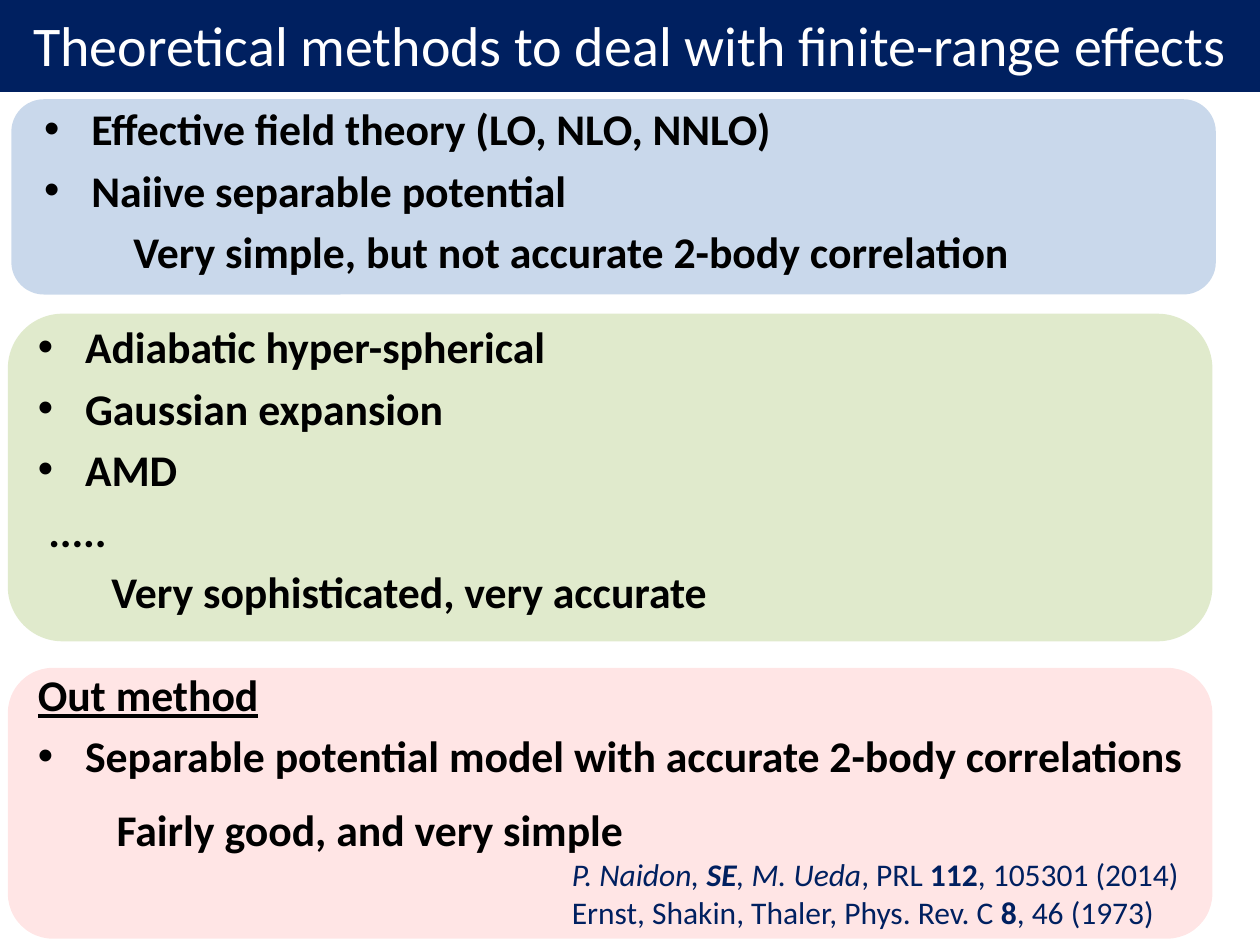
from lxml import etree
from pptx import Presentation
from pptx.dml.color import RGBColor
from pptx.enum import shapes, text
from pptx.oxml import ns
from pptx.util import Pt

NAVY = RGBColor(0x00, 0x20, 0x60)
WHITE = RGBColor(0xFF, 0xFF, 0xFF)
BLACK = RGBColor(0x00, 0x00, 0x00)
BLUE = RGBColor(0x4F, 0x81, 0xBD)
GREEN = RGBColor(0x9B, 0xBB, 0x59)
RED = RGBColor(0xFF, 0x00, 0x00)
BULLET_INDENT = 27


def place(shape, left, top, width, height, anchor):
    shape.left, shape.top = Pt(left), Pt(top)
    shape.width, shape.height = Pt(width), Pt(height)
    frame = shape.text_frame
    frame.word_wrap = True
    frame.auto_size = text.MSO_AUTO_SIZE.NONE
    frame.vertical_anchor = anchor
    return frame


def add_run(paragraph, words, size, color, bold=False, italic=False, underline=False):
    run = paragraph.add_run()
    run.text = words
    font = run.font
    font.name, font.size, font.color.rgb = "Calibri", Pt(size), color
    font.bold, font.italic, font.underline = bold, italic, underline


presentation = Presentation()
presentation.slide_width, presentation.slide_height = Pt(720), Pt(540)
slide = presentation.slides.add_slide(presentation.slide_layouts[4])
title, *bodies = slide.placeholders

# Tinted panels, behind the text
panels = [
    (6.5, 56.7, 111.6, BLUE, 30),
    (4.5, 179.3, 187.2, GREEN, 30),
    (4.5, 381.6, 154.8, RED, 10),
]
for position, (left, top, height, color, opacity) in enumerate(panels):
    panel = slide.shapes.add_shape(
        shapes.MSO_SHAPE.ROUNDED_RECTANGLE, Pt(left), Pt(top), Pt(688.3), Pt(height))
    panel.shadow.inherit = False
    panel.fill.solid()
    panel.fill.fore_color.rgb = color
    panel.line.fill.background()
    tint = panel.fill._xPr.find(".//" + ns.qn("a:srgbClr"))
    etree.SubElement(tint, ns.qn("a:alpha"), val=str(opacity * 1000))
    slide.shapes._spTree.insert(2 + position, panel._element)

# Title bar
title.fill.solid()
title.fill.fore_color.rgb = NAVY
frame = place(title, 0, -2.2, 720, 54.7, text.MSO_ANCHOR.MIDDLE)
paragraph = frame.paragraphs[0]
paragraph.alignment = text.PP_ALIGN.CENTER
add_run(paragraph, "Theoretical methods to deal with finite-range effects", 32, WHITE)

# Method lists: wording, bullet, left indent, space before, underline
lists = [
    ((18, 54.7, 608.4, 130.3), [
        ("Effective field theory (LO, NLO, NNLO)", True, BULLET_INDENT, 5, False),
        ("Naiive separable potential", True, BULLET_INDENT, 5, False),
        ("Very simple, but not accurate 2-body correlation", False, 51, 5, False),
    ]),
    ((14.4, 179.3, 719.3, 209.5), [
        ("Adiabatic hyper-spherical", True, BULLET_INDENT, 5, False),
        ("Gaussian expansion", True, BULLET_INDENT, 5, False),
        ("AMD", True, BULLET_INDENT, 5, False),
        (".....", False, 6, 5, False),
        ("Very sophisticated, very accurate", False, 42, 5, False),
    ]),
    ((14.4, 378, 674.6, 158.4), [
        ("Out method", False, 0, 5, True),
        ("Separable potential model with accurate 2-body correlations",
         True, BULLET_INDENT, 5, False),
        ("Fairly good, and very simple", False, 45, 12, False),
    ]),
]
for body, (box, lines) in zip(bodies, lists):
    frame = place(body, *box, text.MSO_ANCHOR.TOP)
    for number, (words, bulleted, indent, gap, underline) in enumerate(lines):
        paragraph = frame.add_paragraph() if number else frame.paragraphs[0]
        paragraph.alignment = text.PP_ALIGN.LEFT
        paragraph.space_before = Pt(gap)
        properties = paragraph._p.get_or_add_pPr()
        properties.set("marL", str(Pt(indent)))
        properties.set("indent", str(Pt(-BULLET_INDENT if bulleted else 0)))
        if bulleted:
            etree.SubElement(properties, ns.qn("a:buFont"), typeface="Arial")
            etree.SubElement(properties, ns.qn("a:buChar"), char="•")
        else:
            etree.SubElement(properties, ns.qn("a:buNone"))
        add_run(paragraph, words, 25, BLACK, bold=True, underline=underline)

# The layout's fourth body is not needed
unused = bodies[3]._element
unused.getparent().remove(unused)

# References: wording, bold, italic
references = [
    [("P. Naidon, ", False, True), ("SE", True, True), (", M. Ueda", False, True),
     (", PRL ", False, False), ("112", True, False), (", 105301 (2014)", False, False)],
    [("Ernst, Shakin, Thaler, Phys. Rev. C ", False, False), ("8", True, False),
     (", 46 (1973)", False, False)],
]
reference_box = slide.shapes.add_textbox(0, 0, 0, 0)
frame = place(reference_box, 319.7, 485.3, 402.5, 51.1, text.MSO_ANCHOR.TOP)
for number, pieces in enumerate(references):
    paragraph = frame.add_paragraph() if number else frame.paragraphs[0]
    for words, bold, italic in pieces:
        add_run(paragraph, words, 18, NAVY, bold, italic)

presentation.save("out.pptx")
